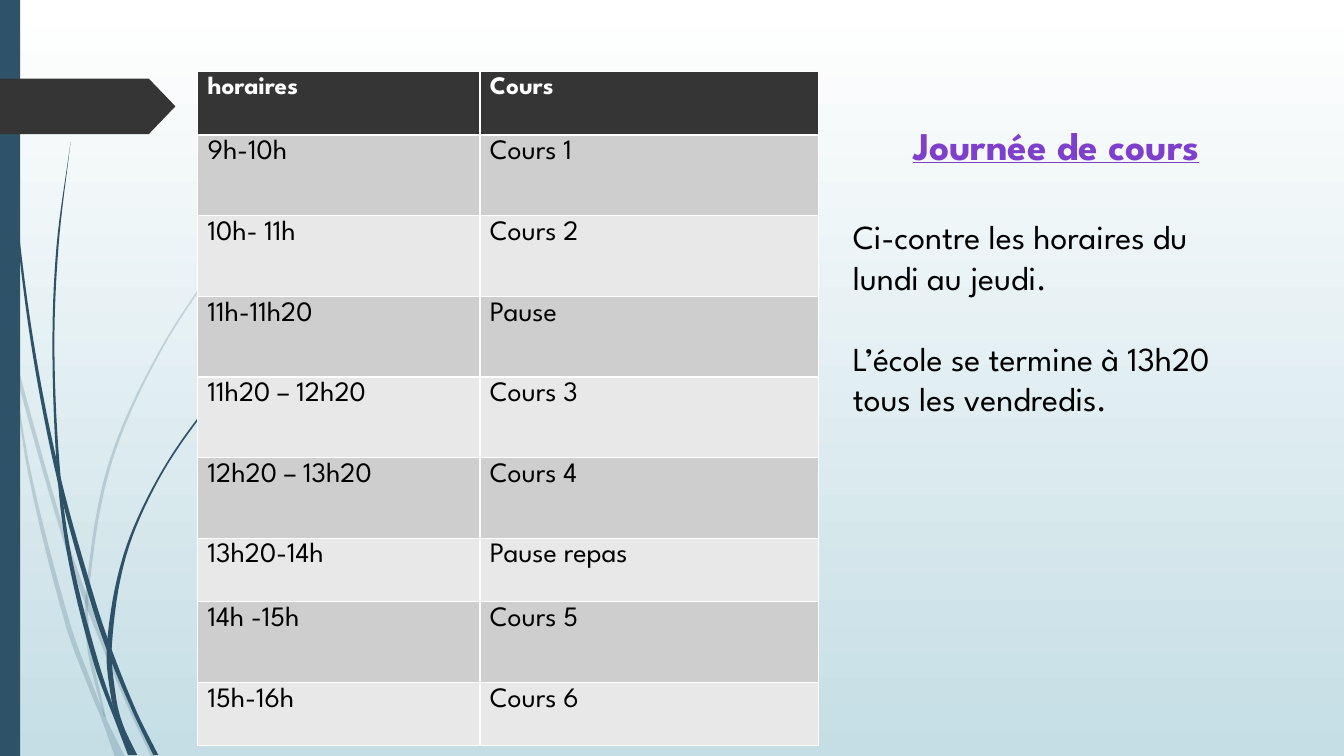
from dataclasses import dataclass

from lxml.etree import SubElement
from pptx import Presentation
from pptx.dml.color import RGBColor
from pptx.enum.shapes import MSO_SHAPE
from pptx.enum.text import PP_ALIGN
from pptx.oxml.ns import qn
from pptx.util import Inches, Pt


@dataclass(frozen=True)
class Theme:
    font: str = "League Spartan"
    white: RGBColor = RGBColor(0xFF, 0xFF, 0xFF)
    black: RGBColor = RGBColor(0x00, 0x00, 0x00)
    mist: RGBColor = RGBColor(0xC5, 0xDE, 0xE5)
    blue: RGBColor = RGBColor(0x2E, 0x53, 0x69)
    dark: RGBColor = RGBColor(0x35, 0x35, 0x35)
    purple: RGBColor = RGBColor(0x7E, 0x40, 0xCC)
    bands: tuple = (RGBColor(0xCE, 0xCE, 0xCE), RGBColor(0xE8, 0xE8, 0xE8))
    header_size: Pt = Pt(18)
    cell_size: Pt = Pt(20)
    title_size: Pt = Pt(28)
    body_size: Pt = Pt(24)


theme = Theme()
CURVE_STEPS = 8


def smooth_rows(rows):
    """Fill in (y, left, right) rows with cubic curves running down the stem."""
    slopes = []
    for index in range(len(rows)):
        above = rows[max(index - 1, 0)]
        below = rows[min(index + 1, len(rows) - 1)]
        slopes.append([(below[side] - above[side]) / (below[0] - above[0]) for side in (1, 2)])
    result = []
    for index, (start, end) in enumerate(zip(rows, rows[1:])):
        height = end[0] - start[0]
        for step in range(CURVE_STEPS):
            t = step / CURVE_STEPS
            edges = [
                (2 * t**3 - 3 * t**2 + 1) * start[side]
                + (t**3 - 2 * t**2 + t) * height * slopes[index][side - 1]
                + (3 * t**2 - 2 * t**3) * end[side]
                + (t**3 - t**2) * height * slopes[index + 1][side - 1]
                for side in (1, 2)
            ]
            result.append((start[0] + t * height, *edges))
    return result + [rows[-1]]


def add_run(paragraph, text, size, color, bold=False):
    run = paragraph.add_run()
    run.text = text
    run.font.name = theme.font
    run.font.size = size
    run.font.color.rgb = color
    run.font.bold = bold
    return run


presentation = Presentation()
presentation.slide_width = Inches(13.33)
presentation.slide_height = Inches(7.5)
slide = presentation.slides.add_slide(presentation.slide_layouts[6])

background = slide.background.fill
background.gradient()
background.gradient_angle = 270
for stop, color in zip(background.gradient_stops, (theme.white, theme.mist)):
    stop.color.rgb = color

# Grass stems: opacity in percent, rows where a new piece begins,
# then rows of (y, left, right) in inches
stems = [
    (20, [1, 4], [
        (2.85, 0, 0.01), (3.45, 0.1, 0.14), (3.76, 0.17, 0.21), (5.21, 0.58, 0.62),
        (5.98, 0.84, 0.89), (6.93, 1.23, 1.27), (7.51, 1.5, 1.55)]),
    (20, [4], [
        (3.5, 0.11, 0.11), (4.7, 0.28, 0.31), (6.2, 0.65, 0.7), (6.85, 0.89, 0.94),
        (7.14, 1.01, 1.06), (7.51, 1.14, 1.24)]),
    (20, [5], [
        (1.53, 3.12, 3.12), (1.97, 2.68, 2.69), (2.45, 2.27, 2.29), (3.48, 1.58, 1.6),
        (4.62, 1.07, 1.1), (5.9, 0.85, 0.88), (6.46, 0.87, 0.91), (7.11, 1.03, 1.05)]),
    (100, [4, 6], [
        (0, 0.03, 0.04), (1.1, 0.07, 0.08), (2.33, 0.17, 0.19), (3.55, 0.33, 0.36),
        (4.77, 0.57, 0.61), (5.91, 0.88, 0.93), (6.45, 1.06, 1.11), (7.07, 1.32, 1.36),
        (7.49, 1.52, 1.57)]),
    (100, [3, 6], [
        (1.41, 0.7, 0.7), (2.45, 0.56, 0.58), (3.49, 0.52, 0.54), (4.72, 0.57, 0.6),
        (5.57, 0.68, 0.72), (6.58, 0.93, 0.98), (7.2, 1.16, 1.2), (7.49, 1.27, 1.36)]),
    (100, [4, 6], [
        (3.44, 2.6, 2.61), (4.06, 2.03, 2.05), (4.75, 1.56, 1.58), (5.52, 1.22, 1.25),
        (6.4, 1.06, 1.11), (6.91, 1.1, 1.15), (7.19, 1.18, 1.22), (7.49, 1.29, 1.36)]),
]
for opacity, cuts, rows in stems:
    curve = smooth_rows(rows)
    bounds = [0, *cuts, len(rows) - 1]
    for first, last in zip(bounds, bounds[1:]):
        piece = curve[first * CURVE_STEPS:last * CURVE_STEPS + 1]
        outline = [(left, y) for y, left, right in piece]
        outline += [(right, y) for y, left, right in reversed(piece)]
        points = [(Inches(x), Inches(y)) for x, y in outline]
        builder = slide.shapes.build_freeform(*points[0])
        builder.add_line_segments(points[1:], close=True)
        stem = builder.convert_to_shape()
        stem.shadow.inherit = False
        stem.line.fill.background()
        stem.fill.solid()
        stem.fill.fore_color.rgb = theme.blue
        if opacity < 100:
            color_element = stem.fill._xPr.find(qn("a:solidFill"))[0]
            SubElement(color_element, qn("a:alpha"), val=str(opacity * 1000))

side_bar = slide.shapes.add_shape(
    MSO_SHAPE.RECTANGLE, Inches(0), Inches(0), Inches(0.2), Inches(7.5))
arrow_tab = slide.shapes.add_shape(
    MSO_SHAPE.PENTAGON, Inches(0), Inches(0.78), Inches(1.74), Inches(0.55))
arrow_tab.adjustments[0] = 0.48
for shape, color in ((side_bar, theme.blue), (arrow_tab, theme.dark)):
    shape.shadow.inherit = False
    shape.line.fill.background()
    shape.fill.solid()
    shape.fill.fore_color.rgb = color

schedule = [
    ("horaires", "Cours", 0.63),
    ("9h-10h", "Cours 1", 0.8),
    ("10h- 11h", "Cours 2", 0.8),
    ("11h-11h20", "Pause", 0.8),
    ("11h20 – 12h20", "Cours 3", 0.8),
    ("12h20 – 13h20", "Cours 4", 0.8),
    ("13h20-14h", "Pause repas", 0.63),
    ("14h -15h", "Cours 5", 0.8),
    ("15h-16h", "Cours 6", 0.63),
]
# The default table style supplies the white cell borders
table = slide.shapes.add_table(
    len(schedule), 2, Inches(1.96), Inches(0.71), Inches(6.16), Inches(6.69)).table
table.columns[0].width = Inches(2.8)
table.columns[1].width = Inches(3.36)
for row_index, (hours, lesson, height) in enumerate(schedule):
    table.rows[row_index].height = Inches(height)
    is_header = row_index == 0
    for column_index, text in enumerate((hours, lesson)):
        cell = table.cell(row_index, column_index)
        cell.fill.solid()
        cell.fill.fore_color.rgb = theme.dark if is_header else theme.bands[(row_index - 1) % 2]
        add_run(
            cell.text_frame.paragraphs[0], text,
            theme.header_size if is_header else theme.cell_size,
            theme.white if is_header else theme.black, is_header)

notice = slide.shapes.add_textbox(Inches(8.36), Inches(1.15), Inches(4.23), Inches(3.47))
notice.text_frame.word_wrap = True
title = notice.text_frame.paragraphs[0]
title.alignment = PP_ALIGN.CENTER
add_run(title, "Journée de cours", theme.title_size, theme.purple, True).font.underline = True
for text, gap in (
    ("Ci-contre les horaires du lundi au jeudi.", Pt(34.5)),
    ("L’école se termine à 13h20 tous les vendredis.", Pt(29)),
):
    paragraph = notice.text_frame.add_paragraph()
    paragraph.space_before = gap
    add_run(paragraph, text, theme.body_size, theme.black)

presentation.save("out.pptx")
